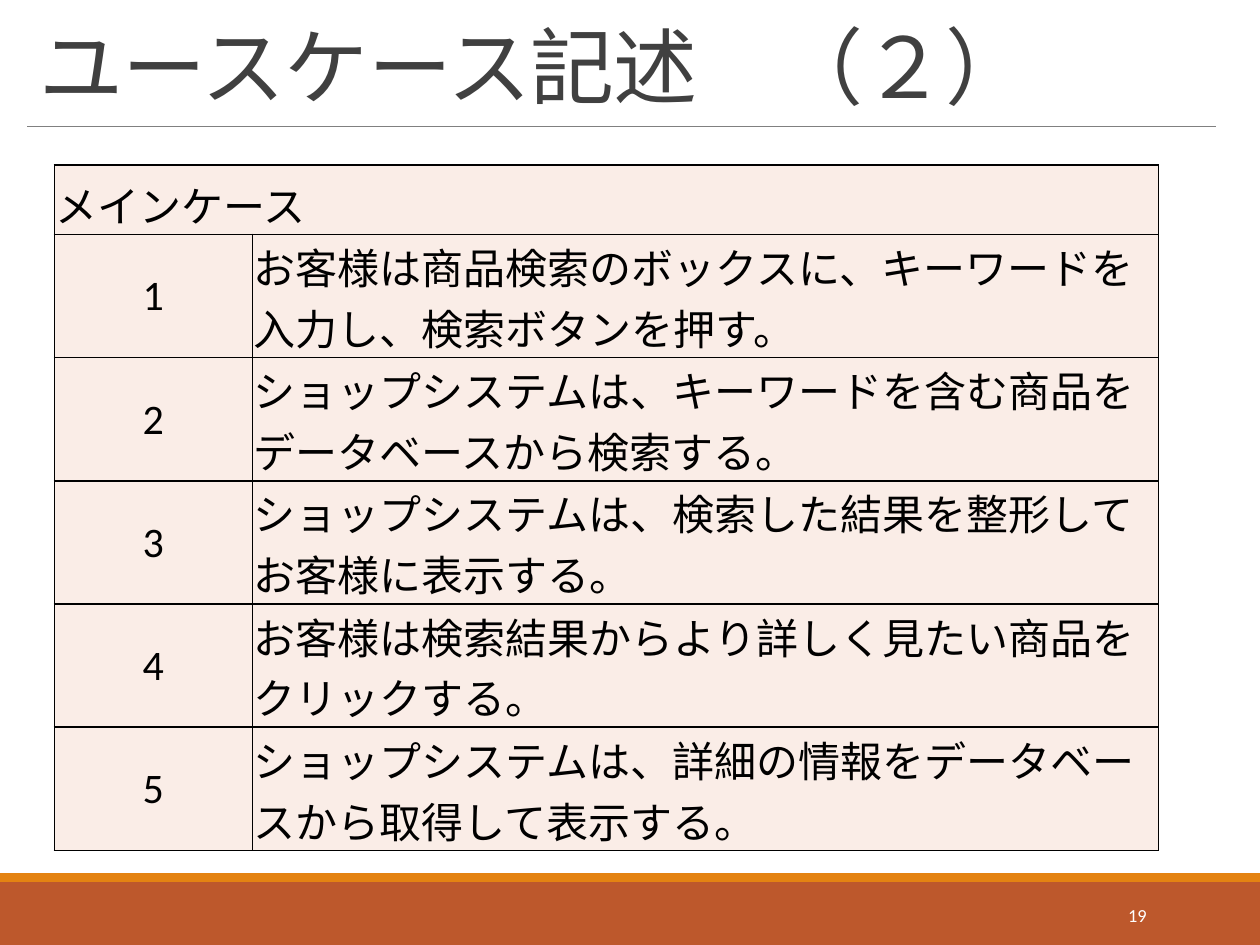
from dataclasses import dataclass

from lxml import etree
from pptx import Presentation
from pptx.dml.color import RGBColor
from pptx.enum import shapes, text
from pptx.oxml import ns
from pptx.util import Pt


@dataclass(frozen=True)
class Theme:
    font: str = "Calibri"
    title_size: float = 48
    table_size: float = 24
    number_size: float = 10.5
    title: str = "404040"
    body: str = "000000"
    light: str = "FFFFFF"
    rule: str = "808080"
    band: str = "BD582C"
    accent: str = "E48312"
    cell: str = "FAEDE7"


THEME = Theme()
HEADING = "メインケース"
STEPS = [
    "お客様は商品検索のボックスに、キーワードを入力し、検索ボタンを押す。",
    "ショップシステムは、キーワードを含む商品をデータベースから検索する。",
    "ショップシステムは、検索した結果を整形してお客様に表示する。",
    "お客様は検索結果からより詳しく見たい商品をクリックする。",
    "ショップシステムは、詳細の情報をデータベースから取得して表示する。",
]


def rgb(value):
    return RGBColor.from_string(value)


def set_text(tf, content, size, color, align=text.PP_ALIGN.LEFT):
    p = tf.paragraphs[0]
    p.text = content
    p.alignment = align
    p.font.name = THEME.font
    p.font.size = Pt(size)
    p.font.color.rgb = rgb(color)
    return p


def add_bar(slide, top, height, color):
    """Full-width footer bar."""
    sp = slide.shapes.add_shape(
        shapes.MSO_SHAPE.RECTANGLE, 0, Pt(top), Pt(720), Pt(height))
    sp.shadow.inherit = False
    sp.fill.solid()
    sp.fill.fore_color.rgb = rgb(color)
    sp.line.fill.background()


def add_rule(slide, left, right, y):
    line = slide.shapes.add_connector(
        shapes.MSO_CONNECTOR.STRAIGHT, Pt(left), Pt(y), Pt(right), Pt(y))
    line.line.color.rgb = rgb(THEME.rule)
    line.line.width = Pt(0.5)
    etree.SubElement(line._element.spPr, ns.qn("a:effectLst"))


def add_text(slide, box, content, size, color, anchor, align=text.PP_ALIGN.LEFT):
    tf = slide.shapes.add_textbox(*map(Pt, box)).text_frame
    tf.word_wrap = True
    tf.vertical_anchor = anchor
    return set_text(tf, content, size, color, align)


def add_borders(cell):
    tc_pr = cell._tc.get_or_add_tcPr()
    for i, side in enumerate(("lnL", "lnR", "lnT", "lnB")):
        ln = etree.Element(ns.qn(f"a:{side}"), w=str(Pt(1)))
        fill = etree.SubElement(ln, ns.qn("a:solidFill"))
        etree.SubElement(fill, ns.qn("a:srgbClr"), val=THEME.body)
        tc_pr.insert(i, ln)  # borders must precede the cell fill


def style_cell(cell, anchor):
    cell.margin_left = cell.margin_right = cell.margin_top = Pt(0.75)
    cell.margin_bottom = 0
    cell.vertical_anchor = anchor
    cell.fill.solid()
    cell.fill.fore_color.rgb = rgb(THEME.cell)
    add_borders(cell)


def add_use_case_table(slide):
    widths = (113.2, 517.7)
    heights = [39.75] + [70.4] * len(STEPS)
    table = slide.shapes.add_table(
        len(heights), len(widths), Pt(31), Pt(94.25),
        Pt(sum(widths)), Pt(sum(heights))).table
    for col, width in zip(table.columns, widths):
        col.width = Pt(width)
    for row, height in zip(table.rows, heights):
        row.height = Pt(height)

    bottom, middle = text.MSO_ANCHOR.BOTTOM, text.MSO_ANCHOR.MIDDLE
    for r in range(len(heights)):
        style_cell(table.cell(r, 0), middle if r else bottom)
        style_cell(table.cell(r, 1), bottom)

    header = table.cell(0, 0)
    header.merge(table.cell(0, 1))
    set_text(header.text_frame, HEADING, THEME.table_size, THEME.body)
    for number, step in enumerate(STEPS, 1):
        set_text(table.cell(number, 0).text_frame, str(number),
                 THEME.table_size, THEME.body, text.PP_ALIGN.CENTER)
        set_text(table.cell(number, 1).text_frame, step,
                 THEME.table_size, THEME.body)


def main():
    prs = Presentation()
    prs.slide_width, prs.slide_height = Pt(720), Pt(540)
    slide = prs.slides.add_slide(prs.slide_layouts[6])

    add_bar(slide, 504, 36, THEME.band)
    add_bar(slide, 499, 5, THEME.accent)
    add_rule(slide, 15.5, 695, 72)
    title = add_text(slide, (15.75, 6.25, 679, 63.5), "ユースケース記述　（２）",
                     THEME.title_size, THEME.title, text.MSO_ANCHOR.BOTTOM)
    title.line_spacing = 0.85
    title.runs[0].font._element.set("spc", "-50")
    add_text(slide, (584.25, 508.5, 78, 28.75), "19", THEME.number_size,
             THEME.light, text.MSO_ANCHOR.MIDDLE, text.PP_ALIGN.RIGHT)
    add_use_case_table(slide)
    prs.save("out.pptx")


if __name__ == "__main__":
    main()
